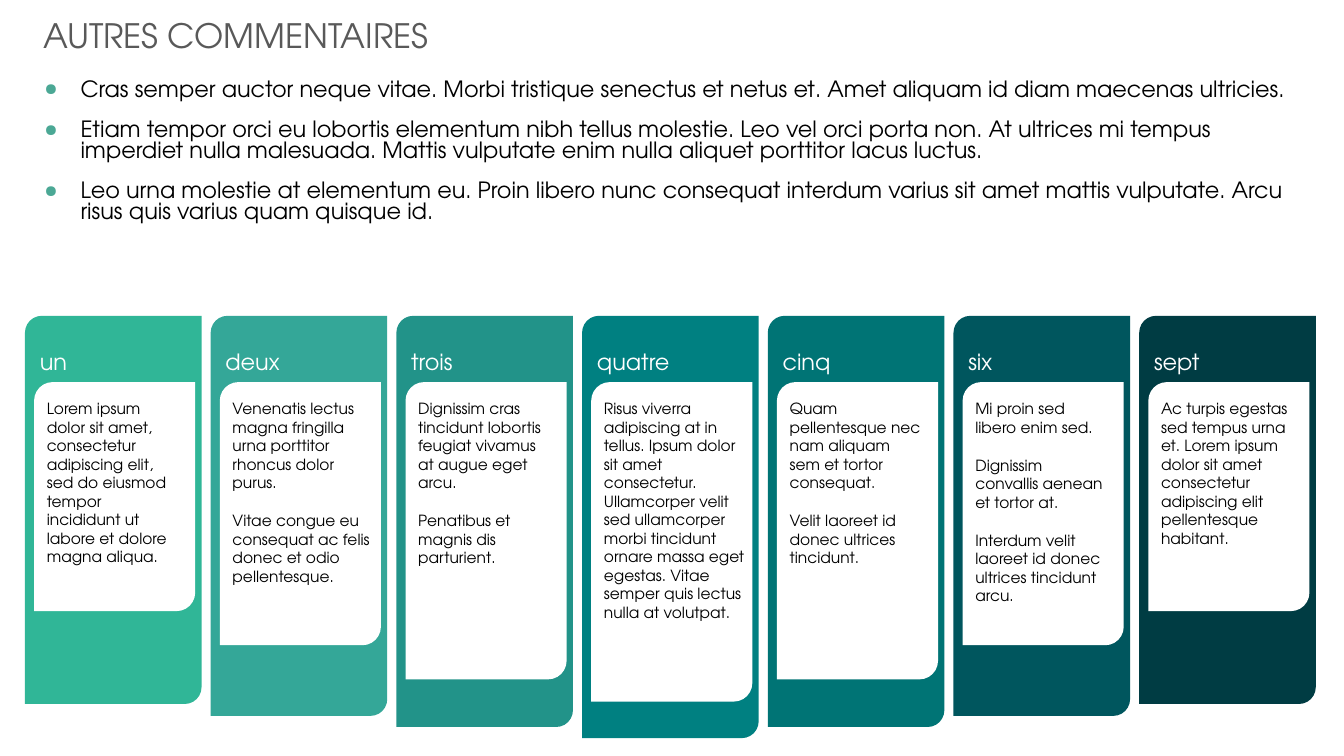
"""Build the comments slide: a title, a bulleted table and seven stepped panels."""
from lxml.etree import SubElement
from pptx import Presentation
from pptx.dml.color import RGBColor
from pptx.enum.shapes import MSO_SHAPE
from pptx.enum.text import MSO_ANCHOR, MSO_AUTO_SIZE, PP_ALIGN
from pptx.oxml.ns import qn
from pptx.util import Cm, Pt

FONT = "TeX Gyre Adventor"
TITLE = "AUTRES COMMENTAIRES"
COMMENTS = [
    "Cras semper auctor neque vitae. Morbi tristique senectus et netus et. Amet aliquam id diam maecenas ultricies.",
    "Etiam tempor orci eu lobortis elementum nibh tellus molestie. Leo vel orci porta non. At ultrices mi tempus "
    "imperdiet nulla malesuada. Mattis vulputate enim nulla aliquet porttitor lacus luctus.",
    "Leo urna molestie at elementum eu. Proin libero nunc consequat interdum varius sit amet mattis vulputate. "
    "Arcu risus quis varius quam quisque id.",
]
# label, colour, panel height, card height, text width, text height, paragraphs
PANELS = [
    ("un", "30B697", 9.78, 5.77, 3.81, 5.46,
     ["Lorem ipsum dolor sit amet, consectetur adipiscing elit, sed do eiusmod tempor incididunt ut labore "
      "et dolore magna aliqua."]),
    ("deux", "34A798", 10.08, 6.63, 4, 5.94,
     ["Venenatis lectus magna fringilla urna porttitor rhoncus dolor purus.",
      "Vitae congue eu consequat ac felis donec et odio pellentesque."]),
    ("trois", "229389", 10.36, 7.49, 3.73, 4.52,
     ["Dignissim cras tincidunt lobortis feugiat vivamus at augue eget arcu.",
      "Penatibus et magnis dis parturient."]),
    ("quatre", "008081", 10.64, 8.05, 4.06, 5.89,
     ["Risus viverra adipiscing at in tellus. Ipsum dolor sit amet consectetur. Ullamcorper velit sed "
      "ullamcorper morbi tincidunt ornare massa eget egestas. Vitae semper quis lectus nulla at volutpat."]),
    ("cinq", "007475", 10.36, 7.49, 3.81, 5.49,
     ["Quam pellentesque nec nam aliquam sem et tortor consequat.",
      "Velit laoreet id donec ultrices tincidunt."]),
    ("six", "00565E", 10.08, 6.63, 3.81, 5.49,
     ["Mi proin sed libero enim sed.",
      "Dignissim convallis aenean et tortor at.",
      "Interdum velit laoreet id donec ultrices tincidunt arcu."]),
    ("sept", "003C43", 9.78, 5.77, 3.81, 4.01,
     ["Ac turpis egestas sed tempus urna et. Lorem ipsum dolor sit amet consectetur adipiscing elit "
      "pellentesque habitant."]),
]
LEFT, PITCH = 0.63, 4.68
PANEL_TOP, PANEL_W = 7.96, 4.45
CARD_DX, CARD_TOP, CARD_W = 0.23, 9.63, 4.06
TEXT_DX, TEXT_TOP = 0.3, 9.94


def rgb(value):
    return RGBColor.from_string(value)


def set_all(target, values):
    for name, value in values.items():
        setattr(target, name, value)


def write(tf, lines, size, color, **spacing):
    for i, line in enumerate(lines):
        p = tf.paragraphs[0] if i == 0 else tf.add_paragraph()
        set_all(p, {"alignment": PP_ALIGN.LEFT, **spacing})
        r = p.add_run()
        r.text = line
        set_all(r.font, {"name": FONT, "size": Pt(size)})
        r.font.color.rgb = rgb(color)


def add_panel(s, x, y, w, h, color, corner):
    sp = s.shapes.add_shape(MSO_SHAPE.ROUND_2_DIAG_RECTANGLE, Cm(x), Cm(y), Cm(w), Cm(h))
    sp.adjustments[0] = corner
    sp.shadow.inherit = False
    sp.fill.solid()
    sp.fill.fore_color.rgb = rgb(color)
    sp.line.fill.background()
    return sp


def add_text(s, x, y, w, h, lines, size, color, **spacing):
    tf = s.shapes.add_textbox(Cm(x), Cm(y), Cm(w), Cm(h)).text_frame
    set_all(tf, {"word_wrap": True, "auto_size": MSO_AUTO_SIZE.SHAPE_TO_FIT_TEXT})
    write(tf, lines, size, color, **spacing)


def add_comments(s):
    frame = s.shapes.add_table(1, 1, Cm(0), Cm(1.52), Cm(33.25), Cm(6.07))
    table = frame.table
    set_all(table, {"first_row": False, "horz_banding": False})
    table.rows[0].height = Cm(3.18)
    frame.height = Cm(6.07)
    cell = table.cell(0, 0)
    cell.fill.background()
    set_all(cell, {"margin_left": Cm(0.76), "margin_right": Cm(0.76),
                   "margin_top": Cm(0.51), "margin_bottom": Cm(0.51)})
    write(cell.text_frame, COMMENTS, 16, "000000", space_after=Pt(14))
    for p in cell.text_frame.paragraphs:
        pPr = p._p.get_or_add_pPr()
        pPr.set("marL", str(Cm(1.27)))
        pPr.set("indent", str(-Cm(0.91)))
        SubElement(SubElement(pPr, qn("a:buClr")), qn("a:srgbClr"), val="4BA895")
        SubElement(pPr, qn("a:buSzPct"), val="75000")
        SubElement(pPr, qn("a:buChar"), char="●")


def main():
    prs = Presentation()
    set_all(prs, {"slide_width": Cm(33.87), "slide_height": Cm(19.05)})
    s = prs.slides.add_slide(prs.slide_layouts[6])
    for i, (label, color, panel_h, card_h, text_w, text_h, lines) in enumerate(PANELS):
        x = LEFT + i * PITCH
        tf = add_panel(s, x, PANEL_TOP, PANEL_W, panel_h, color, 0.095).text_frame
        set_all(tf, {"word_wrap": True, "vertical_anchor": MSO_ANCHOR.TOP, "margin_top": Cm(0.68)})
        write(tf, [label], 16, "FFFFFF")
        add_panel(s, x + CARD_DX, CARD_TOP, CARD_W, card_h, "FFFFFF", 0.115)
        add_text(s, x + TEXT_DX, TEXT_TOP, text_w, text_h, lines, 11, "000000", space_after=Pt(14))
    add_comments(s)
    add_text(s, 0.84, 0.25, 10.95, 1.27, [TITLE], 24, "595959")
    prs.save("out.pptx")


if __name__ == "__main__":
    main()
